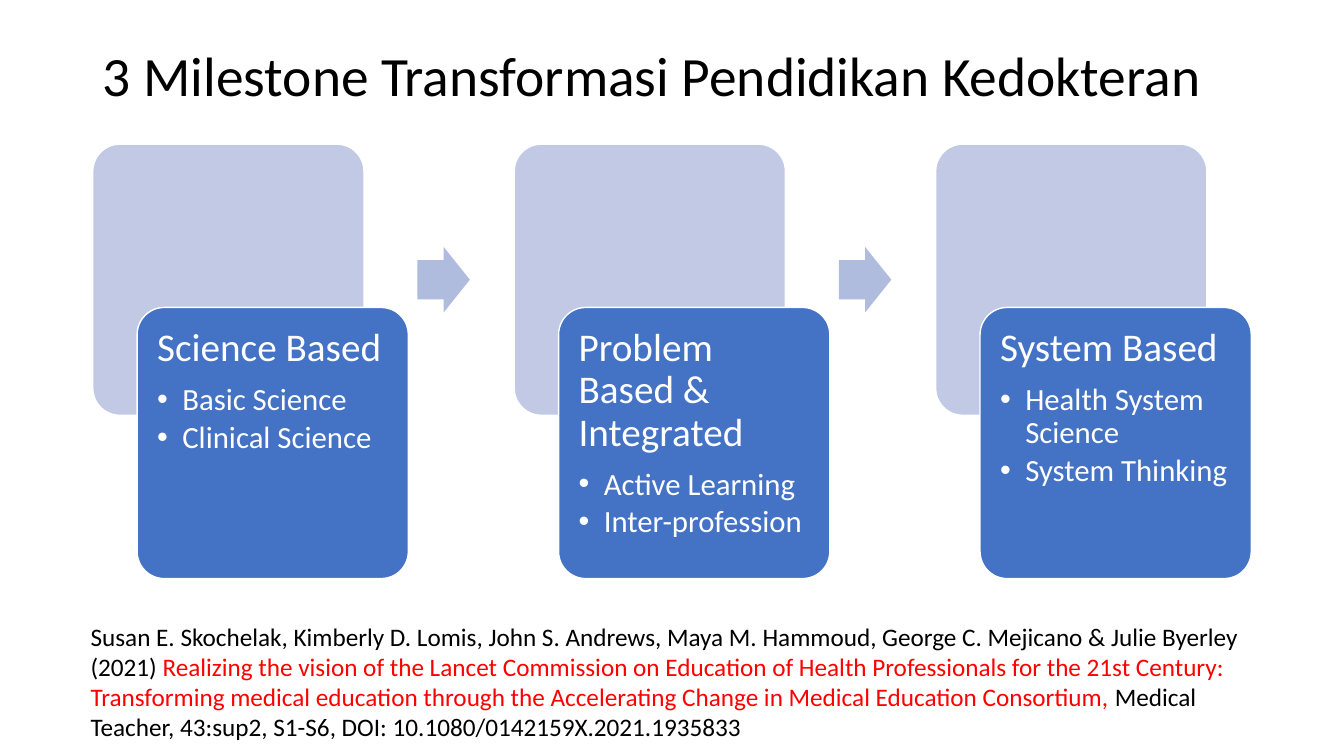
from lxml import etree
from pptx import Presentation
from pptx.dml.color import RGBColor
from pptx.enum.shapes import MSO_SHAPE
from pptx.enum.text import MSO_ANCHOR, PP_ALIGN
from pptx.oxml.ns import qn
from pptx.util import Inches, Pt

ROUNDED = MSO_SHAPE.ROUNDED_RECTANGLE
ARROW = MSO_SHAPE.RIGHT_ARROW
LEFT = PP_ALIGN.LEFT
TOP, MIDDLE = MSO_ANCHOR.TOP, MSO_ANCHOR.MIDDLE

FONT = "Calibri"
BLACK, WHITE, RED = "000000", "FFFFFF", "FF0000"
PALE_BLUE, BLUE, ARROW_BLUE = "C1C9E4", "4472C4", "B0BCDE"

HEADLINE = "3 Milestone Transformasi Pendidikan Kedokteran"
MILESTONES = [
    ("Science Based", ["Basic Science", "Clinical Science"]),
    ("Problem Based & Integrated", ["Active Learning", "Inter-profession"]),
    ("System Based", ["Health System Science", "System Thinking"]),
]
CITATION = [
    ("Susan E. Skochelak, Kimberly D. Lomis, John S. Andrews, Maya M. Hammoud, "
     "George C. Mejicano & Julie Byerley (2021) ", BLACK),
    ("Realizing the vision of the Lancet Commission on Education of Health "
     "Professionals for the 21st Century: Transforming medical education through "
     "the Accelerating Change in Medical Education Consortium,", RED),
    (" Medical Teacher, 43:sup2, S1-S6, DOI: 10.1080/0142159X.2021.1935833", BLACK),
]

FIRST_LEFT, PANEL_TOP, SIDE, PITCH = 0.92, 1.43, 2.69, 4.18
CARD_SHIFT, CARD_DROP = 0.44, 1.62
ARROW_SHIFT, ARROW_WIDTH, ARROW_HEIGHT = 3.22, 0.52, 0.65


def color(hex_string):
    return RGBColor.from_string(hex_string)


def add_text(paragraph, text, size, hex_string):
    run = paragraph.add_run()
    run.text = text
    run.font.name = FONT
    run.font.size = Pt(size)
    run.font.color.rgb = color(hex_string)


def add_block(slide, kind, box, fill, adjustments, outlined=True):
    block = slide.shapes.add_shape(kind, *map(Inches, box))
    block.shadow.inherit = False
    for index, value in enumerate(adjustments):
        block.adjustments[index] = value
    block.fill.solid()
    block.fill.fore_color.rgb = color(fill)
    if outlined:
        block.line.color.rgb = color(WHITE)
        block.line.width = Pt(1)
    else:
        block.line.fill.background()
    return block


def add_bullet(paragraph):
    properties = paragraph._p.get_or_add_pPr()
    properties.set("marL", str(Inches(0.25)))
    properties.set("indent", str(-Inches(0.25)))
    etree.SubElement(properties, qn("a:buFont"), typeface="Arial")
    etree.SubElement(properties, qn("a:buChar"), char="•")


def fill_card(card, heading, points):
    frame = card.text_frame
    frame.word_wrap = True
    frame.vertical_anchor = TOP
    frame.margin_left = frame.margin_right = Inches(0.12)
    frame.margin_top = frame.margin_bottom = Inches(0.12)
    lines = [(heading, 28, 10, False)] + [(point, 22, 3.3, True) for point in points]
    for index, (text, size, space_after, bulleted) in enumerate(lines):
        paragraph = frame.add_paragraph() if index else frame.paragraphs[0]
        if bulleted:
            paragraph.level = 1
            add_bullet(paragraph)
        paragraph.alignment = LEFT
        paragraph.line_spacing = 0.9
        paragraph.space_after = Pt(space_after)
        add_text(paragraph, text, size, WHITE)


def main():
    deck = Presentation()
    deck.slide_width, deck.slide_height = Inches(13.33), Inches(7.5)
    slide = deck.slides.add_slide(deck.slide_layouts[5])

    title = slide.shapes.title
    title.left, title.top = Inches(0.92), Inches(0.4)
    title.width, title.height = Inches(11.5), Inches(0.76)
    title.text_frame.vertical_anchor = MIDDLE
    title.text_frame.word_wrap = True
    headline = title.text_frame.paragraphs[0]
    headline.alignment = LEFT
    headline.line_spacing = 0.9
    add_text(headline, HEADLINE, 39.6, BLACK)

    for index, (heading, points) in enumerate(MILESTONES):
        left = FIRST_LEFT + index * PITCH
        add_block(slide, ROUNDED, (left, PANEL_TOP, SIDE, SIDE), PALE_BLUE, [0.1])
        card = add_block(slide, ROUNDED,
                         (left + CARD_SHIFT, PANEL_TOP + CARD_DROP, SIDE, SIDE), BLUE, [0.1])
        fill_card(card, heading, points)
        if index < len(MILESTONES) - 1:
            arrow_top = PANEL_TOP + (SIDE - ARROW_HEIGHT) / 2
            add_block(slide, ARROW,
                      (left + ARROW_SHIFT, arrow_top, ARROW_WIDTH, ARROW_HEIGHT),
                      ARROW_BLUE, [0.6, 0.5], outlined=False)

    source = slide.shapes.add_textbox(Inches(0.8), Inches(6.11), Inches(11.73), Inches(1.31))
    source.text_frame.word_wrap = True
    for text, hex_string in CITATION:
        add_text(source.text_frame.paragraphs[0], text, 18, hex_string)

    deck.save("out.pptx")


if __name__ == "__main__":
    main()
